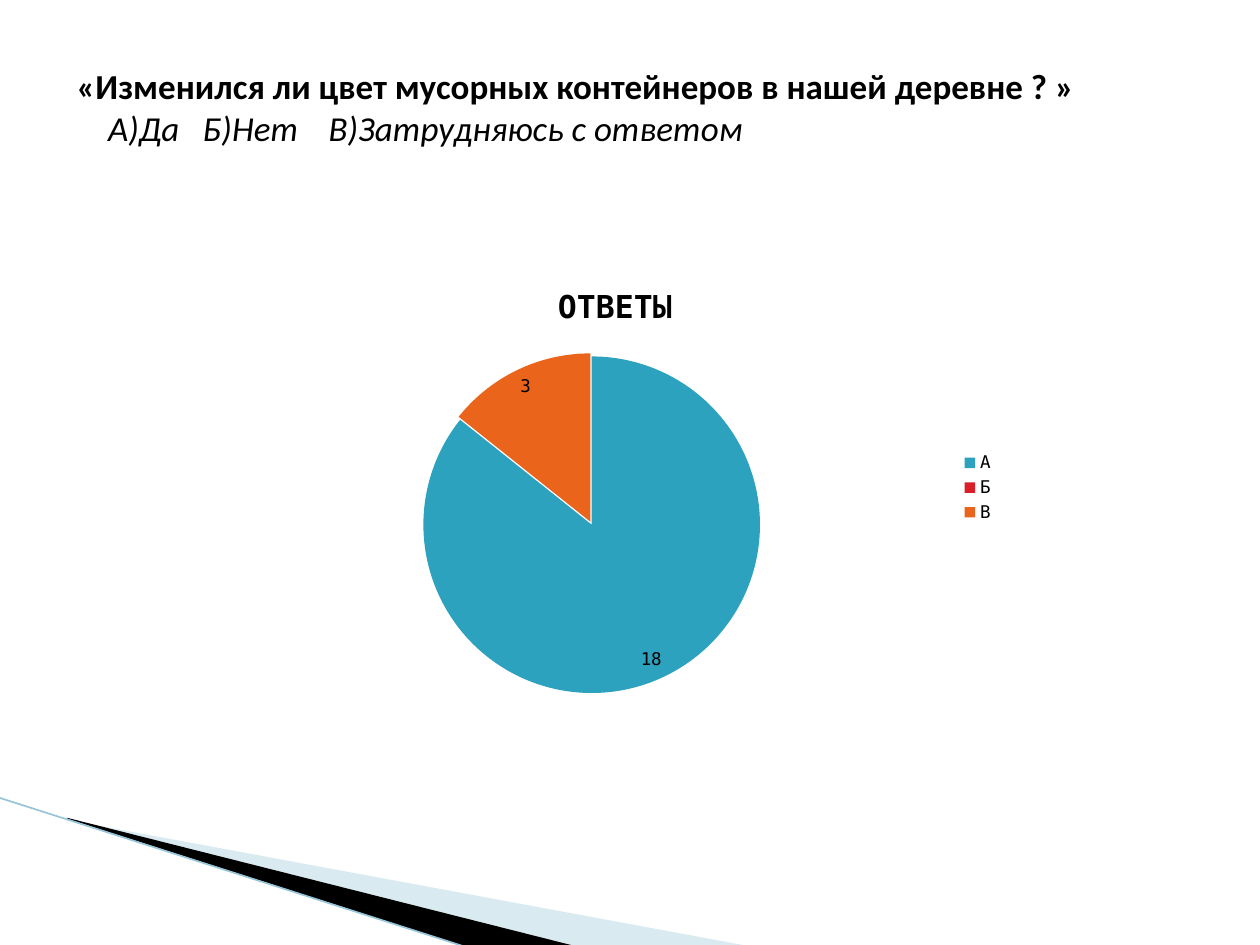
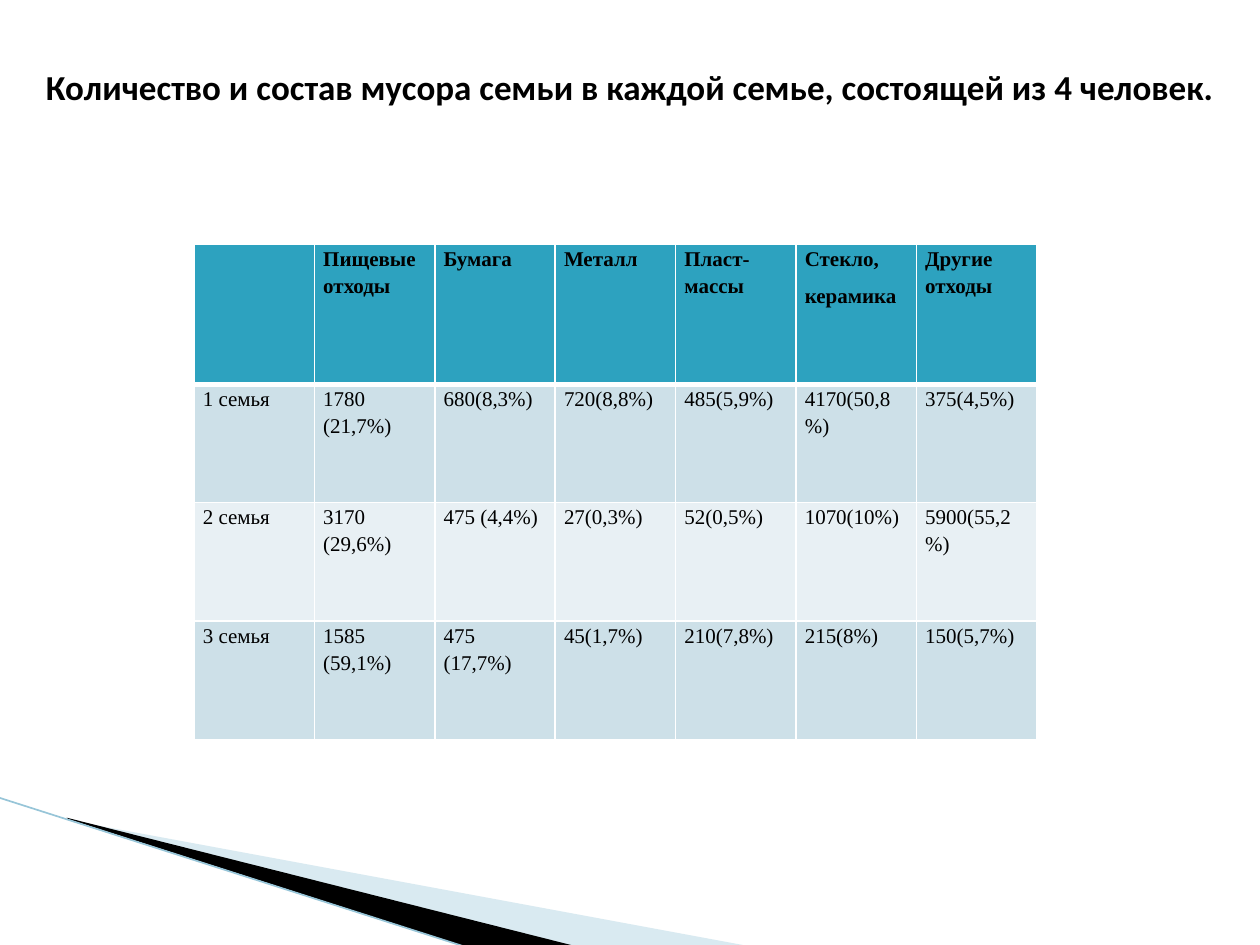
from dataclasses import dataclass

from lxml.etree import SubElement
from pptx import Presentation
from pptx.chart.data import CategoryChartData
from pptx.dml.color import RGBColor
from pptx.enum.chart import XL_CHART_TYPE as ChartType
from pptx.enum.chart import XL_LABEL_POSITION as LabelPosition
from pptx.enum.chart import XL_LEGEND_POSITION as LegendPosition
from pptx.enum.shapes import MSO_CONNECTOR as Connector
from pptx.enum.text import MSO_ANCHOR as Anchor
from pptx.enum.text import MSO_AUTO_SIZE as AutoSize
from pptx.enum.text import PP_ALIGN as Align
from pptx.oxml.ns import qn
from pptx.util import Inches, Pt


@dataclass(frozen=True)
class Theme:
    text: str = "000000"
    white: str = "FFFFFF"
    teal: str = "2DA2BF"
    red: str = "DA1F28"
    orange: str = "EB641B"
    pale_band: str = "A0CBDC"
    edge: str = "97C5D8"
    odd_row: str = "CDE0E8"
    even_row: str = "E8F0F4"
    title_font: str = "Calibri"
    chart_font: str = "DejaVu Sans Mono"
    table_font: str = "Times New Roman"
    title_size: int = 20
    chart_title_size: int = 18
    chart_size: int = 10
    table_size: int = 12


THEME = Theme()

WASTE_ROWS = [
    ["", "Пищевые отходы", "Бумага", "Металл", "Пласт-массы",
     "Стекло,\nкерамика", "Другие отходы"],
    ["1 семья", "1780 (21,7%)", "680(8,3%)", "720(8,8%)", "485(5,9%)",
     "4170(50,8%)", "375(4,5%)"],
    ["2 семья", "3170 (29,6%)", "475 (4,4%)", "27(0,3%)", "52(0,5%)",
     "1070(10%)", "5900(55,2%)"],
    ["3 семья", "1585 (59,1%)", "475 (17,7%)", "45(1,7%)", "210(7,8%)",
     "215(8%)", "150(5,7%)"],
]


def paint(fill, color):
    fill.solid()
    fill.fore_color.rgb = RGBColor.from_string(color)


def style_font(font, name, size, bold=False, italic=False):
    font.name = name
    font.size = Pt(size)
    font.bold = bold
    font.italic = italic
    font.color.rgb = RGBColor.from_string(THEME.text)


# Shared corner decoration
def add_band(page, points, color, opacity=None):
    corners = [(Inches(x), Inches(y)) for x, y in points]
    builder = page.shapes.build_freeform(*corners[0], scale=1.0)
    builder.add_line_segments(corners[1:], close=True)
    band = builder.convert_to_shape()
    band.shadow.inherit = False
    band.line.fill.background()
    paint(band.fill, color)
    if opacity is not None:
        color_node = band.fill._xPr.find(".//" + qn("a:srgbClr"))
        SubElement(color_node, qn("a:alpha"), val=str(opacity * 1000))


def add_corner(page):
    add_band(page, [(0.55, 6.51), (5.95, 7.51), (4.56, 7.51), (0.55, 6.5)],
             THEME.pale_band, opacity=40)
    add_band(page, [(0.53, 6.49), (4.57, 7.51), (3.72, 7.52), (0.54, 6.5)],
             THEME.text)
    edge = page.shapes.add_connector(
        Connector.STRAIGHT, Inches(-0.01), Inches(6.33), Inches(3.71), Inches(7.52))
    edge.line.color.rgb = RGBColor.from_string(THEME.edge)
    edge.line.width = Pt(0.95)
    SubElement(edge._element.spPr, qn("a:effectLst"))


def add_page(deck):
    page = deck.slides.add_slide(deck.slide_layouts[6])
    add_corner(page)
    return page


# Headings
def add_heading(page, text, left, top, width, height, align=Align.LEFT):
    box = page.shapes.add_textbox(
        Inches(left), Inches(top), Inches(width), Inches(height))
    frame = box.text_frame
    frame.word_wrap = True
    frame.auto_size = AutoSize.SHAPE_TO_FIT_TEXT
    frame.vertical_anchor = Anchor.MIDDLE
    frame.text = text
    para = frame.paragraphs[0]
    para.alignment = align
    style_font(para.runs[0].font, THEME.title_font, THEME.title_size, bold=True)
    return frame


def add_options(frame, options, indent, stops):
    para = frame.add_paragraph()
    para.text = "\t".join(options)
    properties = para._p.get_or_add_pPr()
    properties.set("marL", "0")
    properties.set("indent", str(Inches(indent)))
    tabs = SubElement(properties, qn("a:tabLst"))
    for stop in stops:
        SubElement(tabs, qn("a:tab"), pos=str(Inches(stop)), algn="l")
    for span in para.runs:
        style_font(span.font, THEME.title_font, THEME.title_size, italic=True)


# Pie chart
def add_answers_pie(page, title, answers, colors):
    data = CategoryChartData()
    data.categories = list(answers)
    data.add_series(title, answers.values())
    chart = page.shapes.add_chart(
        ChartType.PIE, Inches(1.77), Inches(2.1), Inches(6.22), Inches(3.54),
        data).chart
    style_font(chart.font, THEME.chart_font, THEME.chart_size)

    chart.has_title = True
    chart.chart_title.include_in_layout = False
    heading = chart.chart_title.text_frame
    heading.text = title
    style_font(heading.paragraphs[0].runs[0].font, THEME.chart_font,
               THEME.chart_title_size, bold=True)

    chart.has_legend = True
    chart.legend.position = LegendPosition.RIGHT
    chart.legend.include_in_layout = False

    plot = chart.plots[0]
    plot.vary_by_categories = True
    plot.has_data_labels = True
    labels = plot.data_labels
    labels.show_value = True
    labels.show_percentage = False
    labels.position = LabelPosition.INSIDE_END

    series = plot.series[0]
    for index, color in enumerate(colors):
        paint(series.points[index].format.fill, color)
    first_point = series._element.find(qn("c:dPt"))
    explosion = SubElement(series._element, qn("c:explosion"), val="1")
    first_point.addprevious(explosion)


# Table
def set_borders(cell, top, bottom):
    properties = cell._tc.get_or_add_tcPr()
    for side, points in (("L", 1), ("R", 1), ("T", top), ("B", bottom)):
        line = SubElement(properties, qn(f"a:ln{side}"), w=str(Pt(points)))
        fill = SubElement(line, qn("a:solidFill"))
        SubElement(fill, qn("a:srgbClr"), val=THEME.white)


def fill_cell(cell, text, row, column):
    is_header = row == 0
    set_borders(cell, top=3 if row == 1 else 1, bottom=3 if is_header else 1)
    row_color = THEME.odd_row if row % 2 else THEME.even_row
    paint(cell.fill, THEME.teal if is_header else row_color)
    cell.margin_left = cell.margin_right = Inches(0.07)
    cell.margin_top = cell.margin_bottom = 0
    cell.text = text
    paras = cell.text_frame.paragraphs
    for para in paras:
        para.line_spacing = 1.15
        is_value = row > 0 and column > 0
        if is_value or para._p is not paras[-1]._p:
            para.space_after = Pt(6)
        for span in para.runs:
            style_font(span.font, THEME.table_font, THEME.table_size, bold=is_header)


def add_waste_table(page, rows):
    width = Inches(6.69)
    table = page.shapes.add_table(
        len(rows), len(rows[0]), Inches(1.54), Inches(1.94), width,
        Inches(3.94)).table
    for column in table.columns:
        column.width = width // len(rows[0])
    for index, row in enumerate(table.rows):
        row.height = Inches(0.94 if index else 1.11)
    for r, texts in enumerate(rows):
        for c, text in enumerate(texts):
            fill_cell(table.cell(r, c), text, r, c)


def main():
    deck = Presentation()
    deck.slide_width = Inches(10)
    deck.slide_height = Inches(7.5)

    # Survey answers
    page = add_page(deck)
    question = add_heading(
        page, "«Изменился ли цвет мусорных контейнеров в нашей деревне ? »",
        0.51, 0.46, 9.13, 0.77)
    add_options(question, ["А)Да", "Б)Нет", "В)Затрудняюсь с ответом"],
                indent=0.25, stops=[1.26, 2.27])
    add_answers_pie(page, "ОТВЕТЫ", {"А": 18, "Б": 0, "В": 3},
                    [THEME.teal, THEME.red, THEME.orange])

    # Waste by family
    page = add_page(deck)
    add_waste_table(page, WASTE_ROWS)
    add_heading(
        page,
        "Количество и состав мусора семьи в каждой семье, состоящей из 4 человек.",
        0, 0.47, 10, 0.44, Align.CENTER)

    deck.save("out.pptx")


if __name__ == "__main__":
    main()
